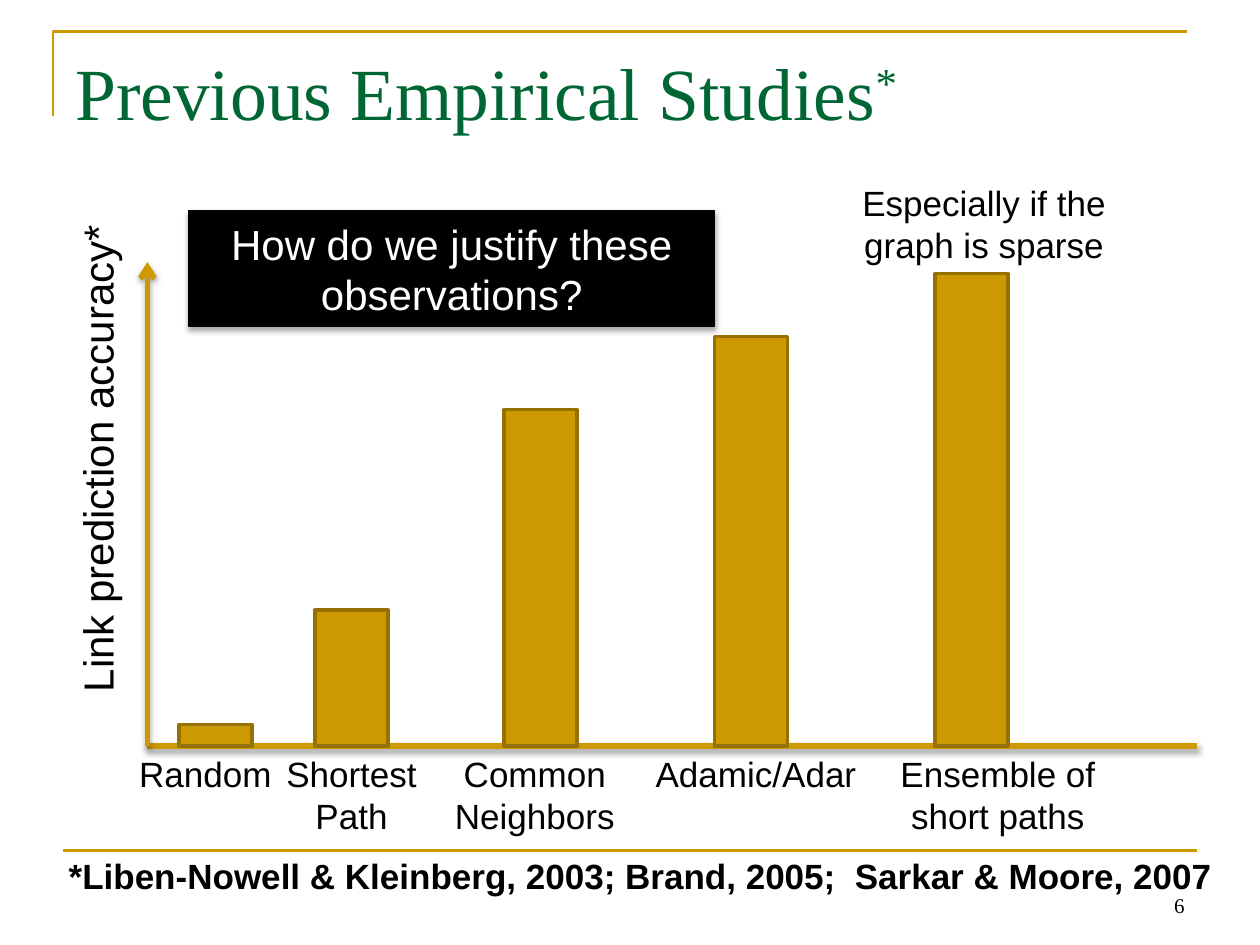
from lxml import etree
from pptx import Presentation
from pptx.dml.color import RGBColor
from pptx.enum import shapes, text
from pptx.oxml.ns import qn
from pptx.util import Inches, Pt

GOLD, EDGE, GREEN, BLACK, WHITE = "CC9900", "977100", "006633", "000000", "FFFFFF"
LEFT, BASE, RIGHT = 1.17, 5.92, 9.5
BAR = 0.58
ALIGN = {"l": text.PP_ALIGN.LEFT, "c": text.PP_ALIGN.CENTER, "r": text.PP_ALIGN.RIGHT}
ANCHOR = {"t": text.MSO_ANCHOR.TOP, "m": text.MSO_ANCHOR.MIDDLE, "b": text.MSO_ANCHOR.BOTTOM}


def paint(part, color):
    part.solid()
    part.fore_color.rgb = RGBColor.from_string(color)


def stroke(shape, color, width):
    paint(shape.line.fill, color)
    shape.line.width = Pt(width)


def shade(shape, on):
    props = shape._element.spPr
    for old in props.findall(qn("a:effectLst")):
        props.remove(old)
    effect = etree.SubElement(props, qn("a:effectLst"))
    if on:
        outer = etree.SubElement(effect, qn("a:outerShdw"), blurRad=str(Pt(3.1)),
                                 dist=str(Pt(1.8)), dir="5400000", rotWithShape="0")
        tint = etree.SubElement(outer, qn("a:srgbClr"), val=BLACK)
        etree.SubElement(tint, qn("a:alpha"), val="35000")


def write(shape, words, size=20, font="Arial", color=BLACK, bold=False,
          align="c", anchor="t", mark=""):
    frame = shape.text_frame
    frame.word_wrap = True
    frame.vertical_anchor = ANCHOR[anchor]
    para = frame.paragraphs[0]
    para.alignment = ALIGN[align]
    for part in filter(None, (words, mark)):
        run = para.add_run()
        run.text = part
        run.font.size = Pt(size)
        run.font.name = font
        run.font.bold = bold
        run.font.color.rgb = RGBColor.from_string(color)
    if mark:
        run.font._element.set("baseline", "30000")


def label(slide, box, words, turn=0, **style):
    shape = slide.shapes.add_textbox(*map(Inches, box))
    shape.rotation = turn
    write(shape, words, **style)
    return shape


def rule(slide, start, end, width, shadow=False, arrow=False):
    line = slide.shapes.add_connector(shapes.MSO_CONNECTOR.STRAIGHT,
                                      *map(Inches, start + end))
    stroke(line, GOLD, width)
    if arrow:
        etree.SubElement(line.line._get_or_add_ln(), qn("a:tailEnd"), type="arrow")
    shade(line, shadow)


def block(slide, box, fill, edge, width, shadow=False):
    shape = slide.shapes.add_shape(shapes.MSO_SHAPE.RECTANGLE, *map(Inches, box))
    paint(shape.fill, fill)
    stroke(shape, edge, width)
    shade(shape, shadow)
    return shape


def corner(slide):
    pen = slide.shapes.build_freeform(Inches(0.42), Inches(0.92))
    pen.add_line_segments([(Inches(0.42), Inches(0.25)), (Inches(9.42), Inches(0.25))],
                          close=False)
    shape = pen.convert_to_shape()
    shape.fill.background()
    stroke(shape, GOLD, 1.5)
    shade(shape, False)


def chart(slide):
    bars = [
        ("Random", 1.42, 0.17, 0.92, 1.42, 0.44),
        ("Shortest Path", 2.5, 1.08, 2.08, 1.42, 0.77),
        ("Common Neighbors", 4, 2.67, 3.33, 1.83, 0.77),
        ("Adamic/Adar", 5.67, 3.25, 5, 2, 0.44),
        ("Ensemble of short paths", 7.42, 3.75, 6.92, 2, 0.77),
    ]
    rule(slide, (LEFT, BASE), (RIGHT, BASE), 3, shadow=True)
    for name, x, tall, left, wide, high in bars:
        block(slide, (x, BASE - tall, BAR, tall), GOLD, EDGE, 2)
        label(slide, (left, BASE, wide, high), name)
    rule(slide, (LEFT, BASE), (LEFT, 2.08), 3, shadow=True, arrow=True)
    label(slide, (-1.46, 3.39, 4.46, 0.5), "Link prediction accuracy*", turn=270, size=24)


def main():
    deck = Presentation()
    deck.slide_width, deck.slide_height = Inches(10), Inches(7.5)
    slide = deck.slides.add_slide(deck.slide_layouts[6])
    serif = "Times New Roman"

    corner(slide)
    rule(slide, (0.5, 6.75), (RIGHT, 6.75), 1.5)
    title = label(slide, (0.5, 0.26, 9.17, 1.01), "Previous Empirical Studies",
                  size=42, font=serif, color=GREEN, align="l", mark="*")
    title.text_frame.margin_top = Inches(0.11)
    chart(slide)
    label(slide, (0.42, 6.73, 9.33, 0.44),
          "*Liben-Nowell & Kleinberg, 2003; Brand, 2005;  Sarkar & Moore, 2007", bold=True)
    ask = block(slide, (1.5, 1.67, 4.17, 0.92), BLACK, BLACK, 0.75, shadow=True)
    write(ask, "How do we justify these observations?", size=24, color=WHITE, anchor="m")
    label(slide, (6.62, 1.39, 2.38, 0.77), "Especially if the graph is sparse")
    label(slide, (7.17, 6.83, 2.33, 0.5), "6", size=12, font=serif, align="r", anchor="b")
    deck.save("out.pptx")


if __name__ == "__main__":
    main()
